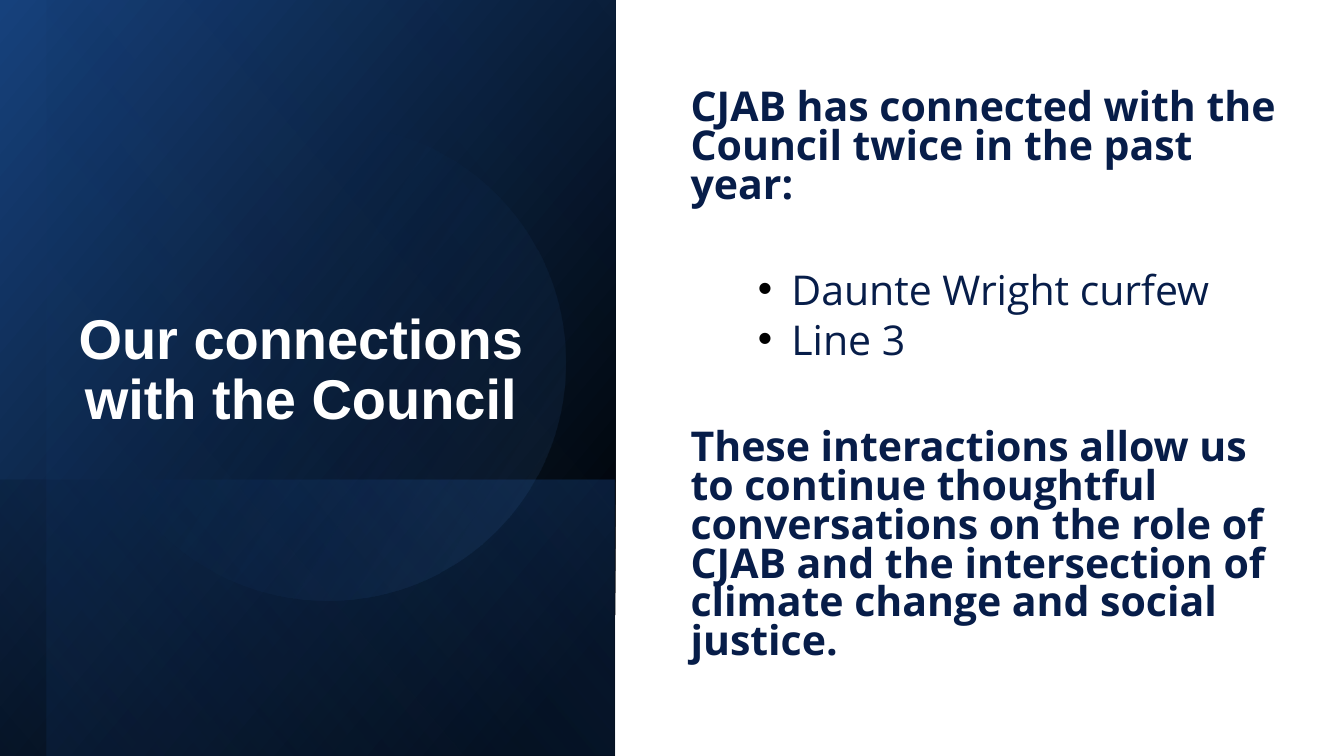
from pptx import Presentation
from pptx.dml.color import RGBColor as RGB
from pptx.enum.shapes import MSO_SHAPE as Shape
from pptx.enum.text import MSO_ANCHOR as Anchor, PP_ALIGN as Align
from pptx.oxml.ns import qn
from pptx.util import Inches, Pt
from lxml.etree import SubElement as Sub

BLACK = RGB(0x00, 0x00, 0x00)
WHITE = RGB(0xFF, 0xFF, 0xFF)
NAVY = RGB(0x07, 0x1D, 0x49)
DEEP = RGB(0x16, 0x41, 0x7C)
BLUE = RGB(0x1D, 0x57, 0xA5)
SKY = RGB(0x5E, 0x96, 0xE3)

deck = Presentation()
deck.slide_width = Inches(10)
deck.slide_height = deck.slide_width * 9 // 16
col = deck.slide_width / 100
row = deck.slide_height / 100
slide = deck.slides.add_slide(deck.slide_layouts[6])


def frame(x, y, wide, high, anchor):
    box = slide.shapes.add_textbox(
        int(x * col), int(y * row), int(wide * col), int(high * row))
    box.text_frame.word_wrap = True
    box.text_frame.vertical_anchor = anchor
    return box.text_frame


def write(para, text, size=22, font="Open Sans", color=NAVY, bold=True,
          align=Align.LEFT, line=0.79, before=0, after=6, left=0.25, dot=False):
    props = para._p.get_or_add_pPr()
    props.set("marL", str(Inches(left)))
    props.set("indent", str(Inches(-0.25 if dot else 0)))
    if dot:
        tint = Sub(props, qn("a:buClr"))
        Sub(tint, qn("a:srgbClr"), val=str(BLACK))
        Sub(props, qn("a:buFont"), typeface="Arial")
        Sub(props, qn("a:buChar"), char="•")
    para.alignment = align
    para.line_spacing = line
    para.space_before = Pt(before)
    para.space_after = Pt(after)
    run = para.add_run()
    run.text = text
    run.font.size = Pt(size)
    run.font.name = font
    run.font.bold = bold
    run.font.color.rgb = color


panels = [
    (Shape.RECTANGLE, 0, 0, 45.8, 100, 90, True, 50,
     [(8, BLACK, 100), (100, DEEP, 100)]),
    (Shape.RECTANGLE, 0, 63.5, 45.7, 36.5, 90, True, 130,
     [(2, BLUE, 29), (100, BLACK, 30)]),
    (Shape.RECTANGLE, 3.5, 0, 42.3, 100, 90, True, 130,
     [(0, BLACK, 0), (99, BLUE, 11)]),
    (Shape.OVAL, 6.7, 16.5, 35.4, 62.93, 101.6, False, 290,
     [(39, BLUE, 0), (100, SKY, 15)]),
]
for kind, x, y, wide, high, turn, flip, angle, stops in panels:
    span, rise = wide * col, high * row
    left = x * col + (span - rise) / 2
    top = y * row + (rise - span) / 2
    panel = slide.shapes.add_shape(
        kind, int(left), int(top), int(rise), int(span))
    panel.rotation = turn
    panel.shadow.inherit = False
    panel.line.fill.background()
    if flip:
        panel._element.spPr.xfrm.set("flipH", "1")
    panel.fill.gradient()
    panel.fill.gradient_angle = 360 - angle
    for stop, (place, color, alpha) in zip(panel.fill.gradient_stops, stops):
        stop.position = place / 100
        stop.color.rgb = color
    tints = panel._element.spPr.iter(qn("a:srgbClr"))
    for tint, (place, color, alpha) in zip(tints, stops):
        Sub(tint, qn("a:alpha"), val=str(alpha * 1000))

title = frame(3.4, 8.5, 38, 49.5, Anchor.BOTTOM)
write(title.paragraphs[0], "Our connections with the Council", size=30,
      font="Arial", color=WHITE, align=Align.CENTER, line=0.9, after=0, left=0)

body = frame(47.9, 9.4, 48.1, 80.9, Anchor.MIDDLE)
write(body.paragraphs[0],
      "CJAB has connected with the Council twice in the past year:")
for text, gap in [("Daunte Wright curfew", 30), ("Line 3", 0)]:
    write(body.add_paragraph(), text, bold=False, before=gap, left=1, dot=True)
write(body.add_paragraph(),
      "These interactions allow us to continue thoughtful conversations on the "
      "role of CJAB and the intersection of climate change and social justice.",
      before=30)

deck.save("out.pptx")
